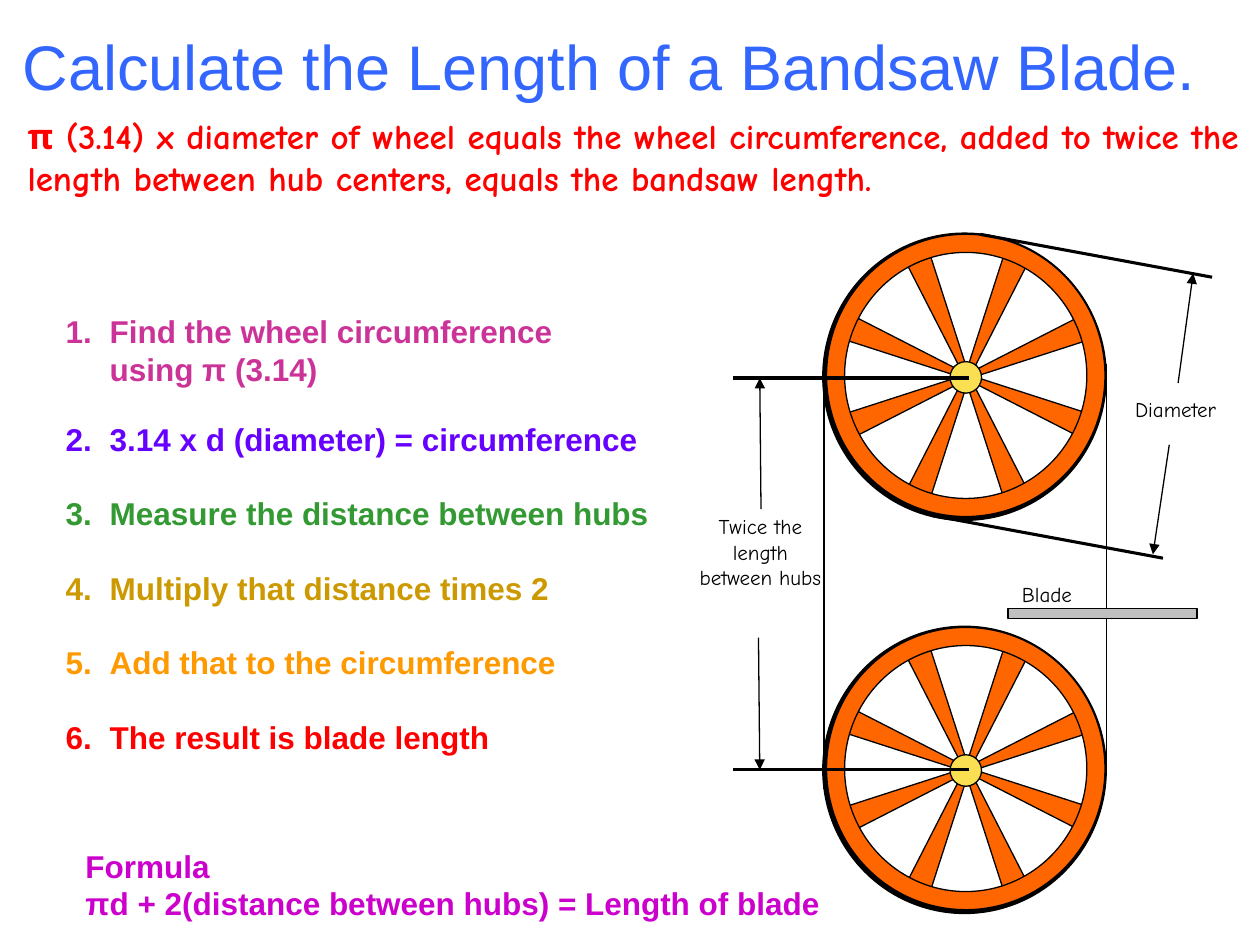
import math
from lxml import etree
from pptx import Presentation, util as u
from pptx.dml.color import RGBColor
from pptx.enum import shapes, text
from pptx.oxml.ns import qn

KIND = shapes.MSO_SHAPE
SANS, HAND = "Arial", "Comic Neue"
STEPS = [
    ("Find the wheel circumference\vusing π (3.14)", "CC3399", 0),
    ("3.14 x d (diameter) = circumference", "6600FF", 18),
    ("Measure the distance between hubs", "339933", 21),
    ("Multiply that distance times 2", "CC9900", 21),
    ("Add that to the circumference", "FF9900", 21),
    ("The result is blade length", "FF0000", 21),
]


def color(code):
    return RGBColor.from_string(code)


def place(item, box):
    item.left, item.top, item.width, item.height = map(u.Inches, box)


def style(para, size, face, code, bold=False):
    for run in para.runs:
        font = run.font
        font.size, font.name, font.bold = u.Pt(size), face, bold
        font.color.rgb = color(code)


def label(parts, box, words, size, face, code, bold=False, align=text.PP_ALIGN.LEFT):
    frame = parts.add_textbox(*map(u.Inches, box)).text_frame
    frame.word_wrap = True
    frame.text = words
    for para in frame.paragraphs:
        para.alignment = align
        style(para, size, face, code, bold)


def note(parts, box, words):
    label(parts, box, words, 12, HAND, "000000", align=text.PP_ALIGN.CENTER)


def solid(parts, kind, box, code, turn=0):
    shape = parts.add_shape(kind, *map(u.Inches, box))
    shape.shadow.inherit = False
    shape.fill.solid()
    shape.fill.fore_color.rgb = color(code)
    shape.line.color.rgb = color("000000")
    shape.line.width = u.Pt(0.75)
    shape.rotation = turn
    return shape


def tip(shape, kind):
    etree.SubElement(shape.line._get_or_add_ln(), qn("a:tailEnd"), type=kind)


def line(parts, start, end, width=0.75, head=None):
    join = parts.add_connector(shapes.MSO_CONNECTOR.STRAIGHT, *map(u.Inches, start + end))
    join.line.color.rgb = color("000000")
    join.line.width = u.Pt(width)
    etree.SubElement(join._element.spPr, qn("a:effectLst"))
    if head:
        tip(join, head)


def title(slide, box):
    head = slide.shapes.title
    place(head, box)
    frame = head.text_frame
    frame.text = "Calculate the Length of a Bandsaw Blade."
    frame.auto_size = text.MSO_AUTO_SIZE.NONE
    frame.paragraphs[0].alignment = text.PP_ALIGN.LEFT
    style(frame.paragraphs[0], 36, SANS, "3366FF")


def steps(slide, box):
    body = slide.placeholders[1]
    place(body, box)
    frame = body.text_frame
    frame.auto_size = text.MSO_AUTO_SIZE.NONE
    frame.text = "\n".join(words for words, _, _ in STEPS)
    for para, (_, code, gap) in zip(frame.paragraphs, STEPS):
        para.space_before = u.Pt(gap)
        props = para._p.get_or_add_pPr()
        props.set("marL", str(u.Inches(0.35)))
        props.set("indent", str(-u.Inches(0.35)))
        etree.SubElement(props, qn("a:buFont"), typeface=SANS)
        etree.SubElement(props, qn("a:buAutoNum"), type="arabicPeriod")
        style(para, 18, SANS, code, True)


def wheel(slide, box):
    x, y, w, h = box
    parts = slide.shapes.add_group_shape().shapes
    solid(parts, KIND.OVAL, box, "000000")
    solid(parts, KIND.OVAL, (x + 0.15, y + 0.15, 2, 2), "FF6600")
    midx, midy, reach = x + w / 2 + 0.02, y + h / 2, 0.54
    base, tall = 0.62, 0.96
    for turn in range(0, 360, 45):
        angle = math.radians(turn)
        left = midx - reach * math.sin(angle) - base / 2
        top = midy + reach * math.cos(angle) - tall / 2
        solid(parts, KIND.ISOSCELES_TRIANGLE, (left, top, base, tall), "FFFFFF", turn)
    rim = solid(parts, KIND.DONUT, (x + 0.03, y + 0.01, 2.21, 2.24), "FF6600")
    rim.adjustments[0] = 0.065
    solid(parts, KIND.OVAL, (x + 1.01, y + 1.02, 0.25, 0.25), "FBDF53")


def blade(slide, box):
    x, y, w, h = box
    parts = slide.shapes
    line(parts, (x, y + 0.14), (x, y + h))
    line(parts, (x + w, y), (x + w, y + h - 0.14))
    note(parts, (x + 1.02, y + 1.68, 1.5, 0.4), "Blade")
    bend = [(x + 2.01 + 0.23 * i / 8, y + 1.82 - 0.03 * math.sin(math.pi * i / 8))
            for i in range(9)]
    path = parts.build_freeform(*bend[0], scale=u.Inches(1))
    path.add_line_segments(bend[1:], close=False)
    curve = path.convert_to_shape()
    curve.shadow.inherit = False
    curve.fill.background()
    curve.line.color.rgb = color("000000")
    curve.line.width = u.Pt(0.75)
    tip(curve, "stealth")
    solid(parts, KIND.RECTANGLE, (x + 1.46, y + 1.94, 1.5, 0.08), "C0C0C0")


def across(slide, box):
    x, y, w, h = box
    parts = slide.shapes.add_group_shape().shapes
    for left, top in ((x + 0.39, y), (x, y + 2.23)):
        line(parts, (left, top), (left + 1.84, top + 0.34), 1.75)
    line(parts, (x + 1.96, y + 1.18), (x + 2.08, y + 0.31), head="triangle")
    line(parts, (x + 1.89, y + 1.67), (x + 1.76, y + 2.54), head="triangle")
    note(parts, (x + 1.19, y + 1.24, 1.5, 0.4), "Diameter")


def hubs(slide, box):
    x, y, w, h = box
    parts = slide.shapes.add_group_shape().shapes
    for top in (y, y + h):
        line(parts, (x, top), (x + w, top), 1.75)
    line(parts, (x + 0.22, y + 1.04), (x + 0.21, y), head="triangle")
    line(parts, (x + 0.2, y + 2.06), (x + 0.21, y + h), head="triangle")
    note(parts, (x - 0.39, y + 1.03, 1.21, 1), "Twice the length between hubs")


def main():
    deck = Presentation()
    deck.slide_width, deck.slide_height = u.Inches(10), u.Inches(7.5)
    slide = deck.slides.add_slide(deck.slide_layouts[1])
    title(slide, (0.08, 0.17, 9.75, 0.7))
    steps(slide, (0.42, 2.43, 5.3, 3.6))
    for top in (1.85, 4.97):
        wheel(slide, (6.53, top, 2.25, 2.28))
    blade(slide, (6.54, 2.89, 2.24, 3.37))
    across(slide, (7.39, 1.86, 2.23, 2.57))
    label(slide.shapes, (0.12, 0.86, 9.88, 0.77),
          "π (3.14) x diameter of wheel equals the wheel circumference, added to twice "
          "the length between hub centers, equals the bandsaw length.",
          20, HAND, "FF0000", True)
    label(slide.shapes, (0.58, 6.67, 8.25, 0.7),
          "Formula\nπd + 2(distance between hubs) = Length of blade",
          18, SANS, "CC00CC", True)
    hubs(slide, (5.82, 3, 1.87, 3.11))
    deck.save("out.pptx")


if __name__ == "__main__":
    main()
